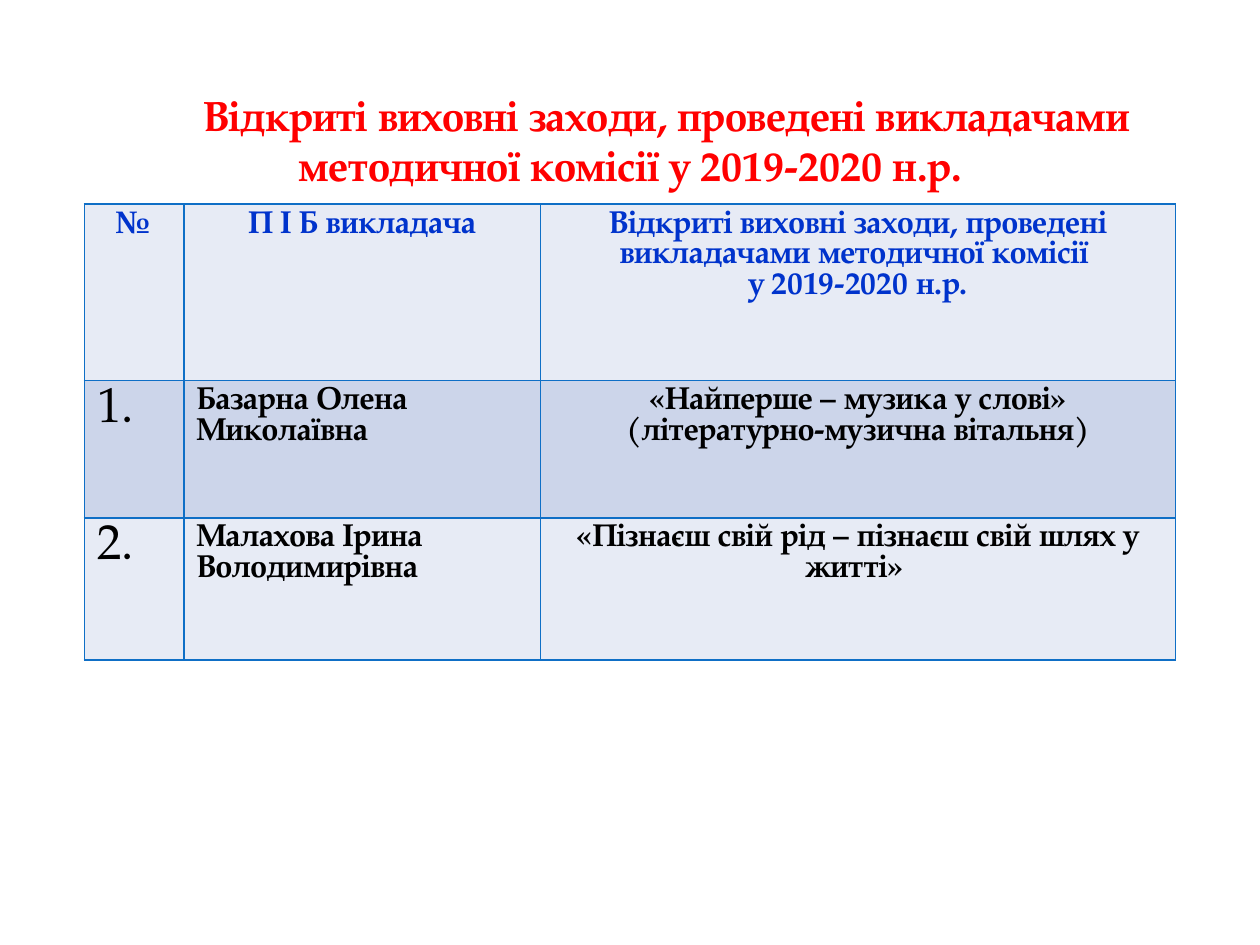
from lxml.etree import SubElement
from pptx import Presentation
from pptx.dml.color import RGBColor
from pptx.enum.text import MSO_ANCHOR, MSO_AUTO_SIZE, PP_ALIGN
from pptx.oxml.ns import qn
from pptx.util import Inches, Pt

COLORS = {
    "title": "FF0000",
    "heading": "0033CC",
    "text": "000000",
    "border": "0F6FC6",
    "light": "E7EBF5",
    "dark": "CCD5EA",
}
FONT = "TeX Gyre Pagella"


def write(para, text, size, color, bold, align):
    para.alignment = align
    span = para.add_run()
    span.text = text
    span.font.name = FONT
    span.font.size = Pt(size)
    span.font.bold = bold
    span.font.color.rgb = RGBColor.from_string(COLORS[color])


def style_cell(cell, fill):
    """Draw a thin line on all four sides, then fill the cell."""
    properties = cell._tc.get_or_add_tcPr()
    for side in ("a:lnL", "a:lnR", "a:lnT", "a:lnB"):
        line = SubElement(properties, qn(side), w=str(Pt(1)))
        solid = SubElement(line, qn("a:solidFill"))
        SubElement(solid, qn("a:srgbClr"), val=COLORS["border"])
    cell.fill.solid()
    cell.fill.fore_color.rgb = RGBColor.from_string(COLORS[fill])


deck = Presentation()
deck.slide_width, deck.slide_height = Inches(10), Inches(7.5)
page = deck.slides.add_slide(deck.slide_layouts[5])

# Title
title = page.shapes.title
title.left, title.top = Inches(0.83), Inches(0.52)
title.width, title.height = Inches(8.43), Inches(0.99)
frame = title.text_frame
frame.word_wrap = True
frame.auto_size = MSO_AUTO_SIZE.NONE
frame.vertical_anchor = MSO_ANCHOR.BOTTOM
frame.margin_bottom = 0
para = frame.paragraphs[0]
write(para, "Відкриті виховні заходи, проведені викладачами методичної комісії у 2019-2020 н.р. ",
      24, "title", True, PP_ALIGN.CENTER)
para.line_spacing = 1.0
para._p.get_or_add_pPr().set("indent", str(Inches(0.49)))

# Table of teachers and events; each cell is a list of paragraphs
rows = [
    [["№"], ["П І Б викладача"],
     ["Відкриті виховні заходи, проведені викладачами методичної комісії ",
      "у 2019-2020 н.р."]],
    [["1."], ["Базарна Олена Миколаївна"],
     ["«Найперше – музика у слові» (літературно-музична вітальня)"]],
    [["2."], ["Малахова Ірина Володимирівна"],
     ["«Пізнаєш свій рід – пізнаєш свій шлях у житті» "]],
]
widths = [0.79, 2.83, 5.04]
heights = [1.4, 1.09, 1.13]
table = page.shapes.add_table(len(rows), len(widths), Inches(0.67), Inches(1.62),
                              Inches(sum(widths)), Inches(sum(heights))).table
for column, width in zip(table.columns, widths):
    column.width = Inches(width)
for row, height in zip(table.rows, heights):
    row.height = Inches(height)

for row_index, row in enumerate(rows):
    is_heading = row_index == 0
    for column_index, lines in enumerate(row):
        cell = table.cell(row_index, column_index)
        style_cell(cell, "dark" if row_index % 2 else "light")
        is_number = column_index == 0 and not is_heading
        centered = is_heading or column_index == 2
        for line_index, text in enumerate(lines):
            frame = cell.text_frame
            para = frame.add_paragraph() if line_index else frame.paragraphs[0]
            write(para, text, 28 if is_number else 18,
                  "heading" if is_heading else "text", not is_number,
                  PP_ALIGN.CENTER if centered else PP_ALIGN.LEFT)

deck.save("out.pptx")
